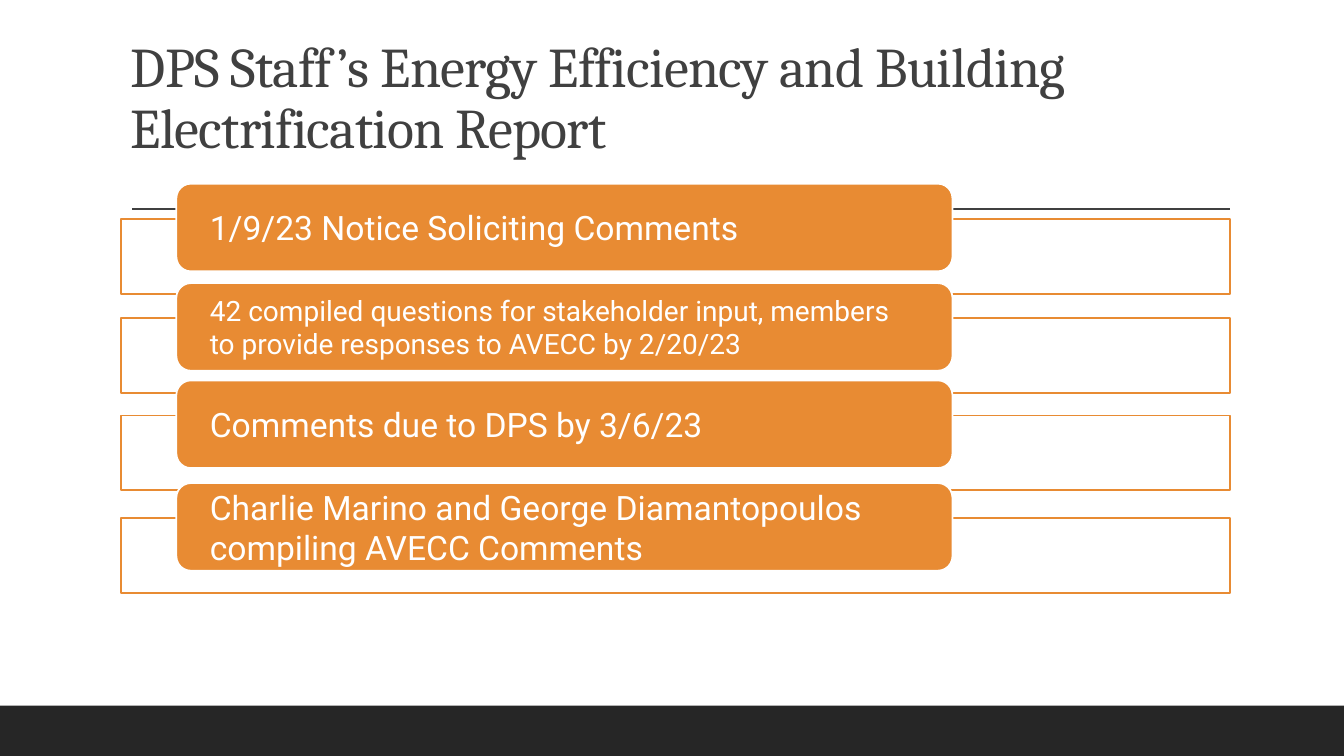
import dataclasses

import lxml.etree
import pptx
import pptx.dml.color
import pptx.enum.shapes
import pptx.enum.text
import pptx.oxml.ns
import pptx.util

SHAPES = pptx.enum.shapes.MSO_SHAPE
ANCHORS = pptx.enum.text.MSO_ANCHOR
qn = pptx.oxml.ns.qn

WIDTH = pptx.util.Inches(13.33)
HEIGHT = pptx.util.Inches(7.5)
ORANGE = "E88B33"
WHITE = "FFFFFF"
GREY = "404040"
DARK = "262626"
FRAME_HEIGHT = 9.9
CARD_HEIGHT = 11.6
CARD_RISE = 4.65


@dataclasses.dataclass(frozen=True)
class Box:
    left: float
    top: float
    width: float
    height: float

    def emu(self) -> tuple[int, int, int, int]:
        return x(self.left), y(self.top), x(self.width), y(self.height)


@dataclasses.dataclass(frozen=True)
class Step:
    top: float
    text: str
    size: int = 24


STEPS = [
    Step(28.95, "1/9/23 Notice Soliciting Comments"),
    Step(42.1, "42 compiled questions for stakeholder input, members "
               "to provide responses to AVECC by 2/20/23", 20),
    Step(54.97, "Comments due to DPS by 3/6/23"),
    Step(68.55, "Charlie Marino and George Diamantopoulos compiling AVECC Comments"),
]


def x(percent: float) -> int:
    return round(WIDTH * percent / 100)


def y(percent: float) -> int:
    return round(HEIGHT * percent / 100)


def color(value: str) -> pptx.dml.color.RGBColor:
    return pptx.dml.color.RGBColor.from_string(value)


def add_box(slide, kind, box: Box, fill: str, line: str | None = None):
    sp = slide.shapes.add_shape(kind, *box.emu())
    sp.shadow.inherit = False
    sp.fill.solid()
    sp.fill.fore_color.rgb = color(fill)
    if line:
        sp.line.color.rgb = color(line)
        sp.line.width = pptx.util.Pt(1.25)
    else:
        sp.line.fill.background()
    return sp


def write(sp, text: str, size: int, font: str, ink: str, anchor):
    tf = sp.text_frame
    tf.word_wrap = True
    tf.vertical_anchor = anchor
    p = tf.paragraphs[0]
    p.alignment = pptx.enum.text.PP_ALIGN.LEFT
    r = p.add_run()
    r.text = text
    r.font.size = pptx.util.Pt(size)
    r.font.name = font
    r.font.color.rgb = color(ink)
    return p


def add_title(slide, text: str) -> None:
    sp = slide.shapes.add_textbox(*Box(9, 10.67, 82.5, 11.2).emu())
    p = write(sp, text, 40, "Cambria", GREY, ANCHORS.BOTTOM)
    p.line_spacing = 0.9
    p.runs[0].font._element.set("spc", "-50")


def add_rule(slide) -> None:
    straight = pptx.enum.shapes.MSO_CONNECTOR.STRAIGHT
    line = slide.shapes.add_connector(straight, x(9.83), y(27.65), x(91.55), y(27.65))
    line.line.color.rgb = color(GREY)
    line.line.width = pptx.util.Pt(1)
    lxml.etree.SubElement(line._element.spPr, qn("a:effectLst"))


def add_step(slide, step: Step) -> None:
    frame = add_box(slide, SHAPES.RECTANGLE, Box(9, step.top, 82.5, FRAME_HEIGHT), WHITE, ORANGE)
    fill = frame._element.spPr.find(qn("a:solidFill"))
    lxml.etree.SubElement(fill[0], qn("a:alpha"), val="90000")
    card = add_box(slide, SHAPES.ROUNDED_RECTANGLE,
                   Box(13.12, step.top - CARD_RISE, 57.75, CARD_HEIGHT), ORANGE, WHITE)
    write(card, step.text, step.size, "Roboto", WHITE, ANCHORS.MIDDLE)
    tf = card.text_frame
    tf.margin_left = tf.margin_right = pptx.util.Inches(0.29)
    tf.margin_top = tf.margin_bottom = 0


def main() -> None:
    prs = pptx.Presentation()
    prs.slide_width = WIDTH
    prs.slide_height = HEIGHT
    slide = prs.slides.add_slide(prs.slide_layouts[6])
    add_box(slide, SHAPES.RECTANGLE, Box(0, 93.33, 100, 6.67), DARK)
    add_rule(slide)
    add_title(slide, "DPS Staff’s Energy Efficiency and Building Electrification Report")
    for step in STEPS:
        add_step(slide, step)
    prs.save("out.pptx")


if __name__ == "__main__":
    main()
